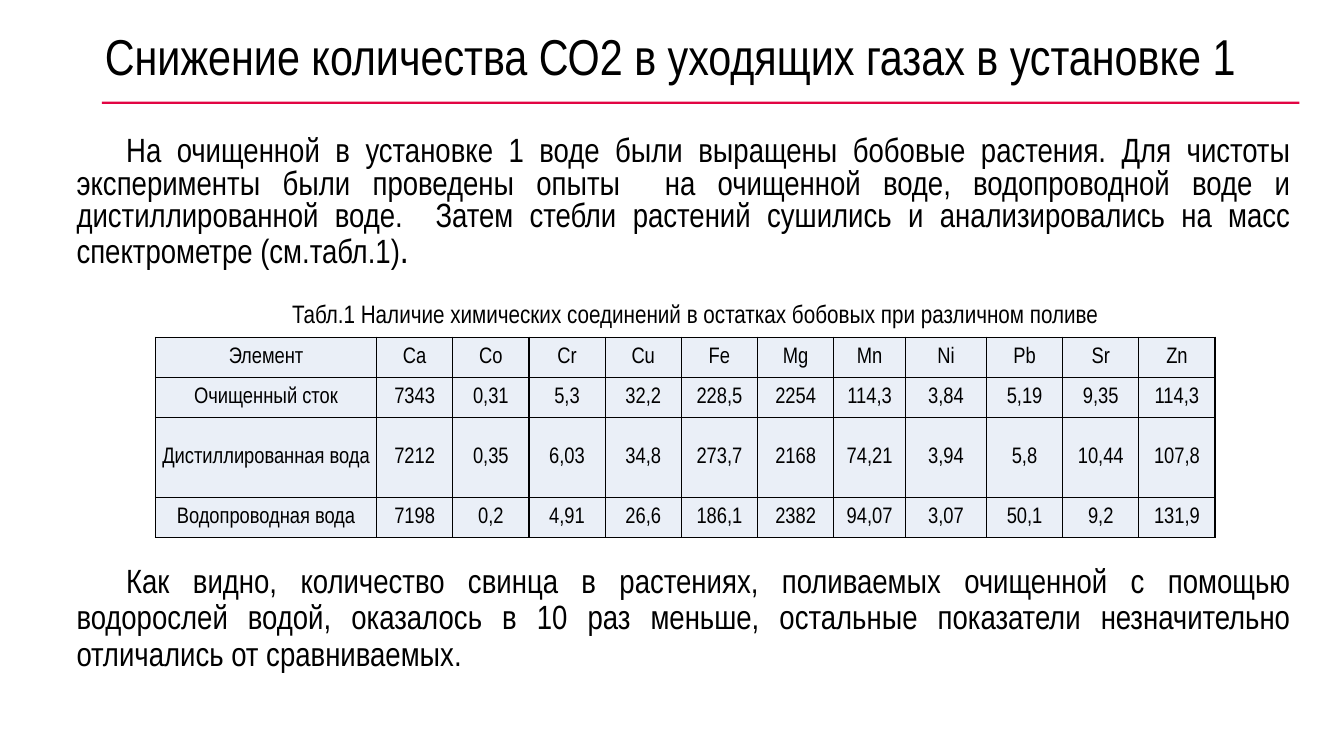
from lxml.etree import SubElement
from pptx import Presentation
from pptx.dml.color import RGBColor
from pptx.enum.shapes import MSO_SHAPE
from pptx.enum.text import MSO_ANCHOR, PP_ALIGN
from pptx.oxml.ns import qn
from pptx.util import Cm, Pt

COLORS = {"text": "000000", "rule": "E20443", "cell": "EAEFF7", "border": "000000"}


def add_text(paragraph, text, size, **formats):
    """Add a run to the paragraph and apply the paragraph formats."""
    run = paragraph.add_run()
    run.text = text
    run.font.name = "Arial Narrow"
    run.font.size = Pt(size)
    run.font.color.rgb = RGBColor.from_string(COLORS["text"])
    for name, value in formats.items():
        setattr(paragraph, name, value)


def add_borders(cell):
    """Draw a one-point line on each side of the cell."""
    properties = cell._tc.get_or_add_tcPr()
    for position, side in enumerate(("lnL", "lnR", "lnT", "lnB")):
        line = SubElement(properties, qn(f"a:{side}"), w=str(Pt(1)))
        fill = SubElement(line, qn("a:solidFill"))
        SubElement(fill, qn("a:srgbClr"), val=COLORS["border"])
        properties.insert(position, line)


presentation = Presentation()
presentation.slide_width = Cm(33.87)
presentation.slide_height = Cm(19.05)
slide = presentation.slides.add_slide(presentation.slide_layouts[5])

# Rule under the title
rule = slide.shapes.add_shape(MSO_SHAPE.RECTANGLE, Cm(2.57), Cm(2.56), Cm(30.18), Cm(0.06))
rule.shadow.inherit = False
rule.fill.solid()
rule.fill.fore_color.rgb = RGBColor.from_string(COLORS["rule"])
rule.line.fill.background()

# Title
title = slide.shapes.title
title_box = {"left": Cm(2.39), "top": Cm(0.13), "width": Cm(29.41), "height": Cm(2.74)}
for name, value in title_box.items():
    setattr(title, name, value)
title.text_frame.vertical_anchor = MSO_ANCHOR.MIDDLE
add_text(title.text_frame.paragraphs[0],
         "Снижение количества СО2 в уходящих газах в установке 1", 36,
         alignment=PP_ALIGN.LEFT, line_spacing=0.9)

# Body text: introduction, table caption, conclusion below the table
body = slide.shapes.add_textbox(Cm(1.68), Cm(3.33), Cm(31.09), Cm(13.97)).text_frame
body.word_wrap = True
introduction = body.paragraphs[0]
add_text(introduction,
         "На очищенной в установке 1 воде были выращены бобовые растения. "
         "Для чистоты эксперименты были проведены опыты  на очищенной воде, "
         "водопроводной воде и дистиллированной воде.  Затем стебли растений "
         "сушились и анализировались на масс спектрометре (см.табл.1)", 24,
         alignment=PP_ALIGN.JUSTIFY, line_spacing=0.8)
add_text(introduction, ".", 28)
caption = body.add_paragraph()
add_text(caption,
         "Табл.1 Наличие химических соединений в остатках бобовых при различном поливе", 18,
         alignment=PP_ALIGN.CENTER, line_spacing=0.8, space_before=Pt(23))
conclusion = body.add_paragraph()
add_text(conclusion,
         "Как видно, количество свинца в растениях, поливаемых очищенной с помощью "
         "водорослей водой, оказалось в 10 раз меньше, остальные показатели "
         "незначительно отличались от сравниваемых.", 24,
         alignment=PP_ALIGN.JUSTIFY, line_spacing=0.9, space_before=Pt(169))
for paragraph, attribute, indent in ((introduction, "indent", Cm(1.25)),
                                     (caption, "marL", Cm(0.6)),
                                     (conclusion, "indent", Cm(1.25))):
    paragraph._p.get_or_add_pPr().set(attribute, str(indent))

# Table of element contents
rows = [
    ["Элемент", "Ca", "Co", "Cr", "Cu", "Fe", "Mg", "Mn", "Ni", "Pb", "Sr", "Zn"],
    ["Очищенный сток", "7343", "0,31", "5,3", "32,2", "228,5", "2254", "114,3",
     "3,84", "5,19", "9,35", "114,3"],
    ["Дистиллированная вода", "7212", "0,35", "6,03", "34,8", "273,7", "2168", "74,21",
     "3,94", "5,8", "10,44", "107,8"],
    ["Водопроводная вода", "7198", "0,2", "4,91", "26,6", "186,1", "2382", "94,07",
     "3,07", "50,1", "9,2", "131,9"],
]
column_widths = [5.57] + [1.92] * 6 + [1.81, 2.04] + [1.92] * 3
row_heights = [1.01, 1.01, 2.01, 1.01]
table = slide.shapes.add_table(len(rows), len(column_widths), Cm(3.92), Cm(8.5),
                               Cm(sum(column_widths)), Cm(sum(row_heights))).table
table.first_row = False
table.horz_banding = False
for column, width in zip(table.columns, column_widths):
    column.width = Cm(width)
cell_format = {"margin_left": Cm(0.03), "margin_right": Cm(0.03), "margin_top": Cm(0.03),
               "margin_bottom": Cm(0), "vertical_anchor": MSO_ANCHOR.MIDDLE}
for row, height, values in zip(table.rows, row_heights, rows):
    row.height = Cm(height)
    for cell, value in zip(row.cells, values):
        for name, setting in cell_format.items():
            setattr(cell, name, setting)
        cell.fill.solid()
        cell.fill.fore_color.rgb = RGBColor.from_string(COLORS["cell"])
        add_borders(cell)
        add_text(cell.text_frame.paragraphs[0], value, 16, alignment=PP_ALIGN.CENTER)

presentation.save("out.pptx")
